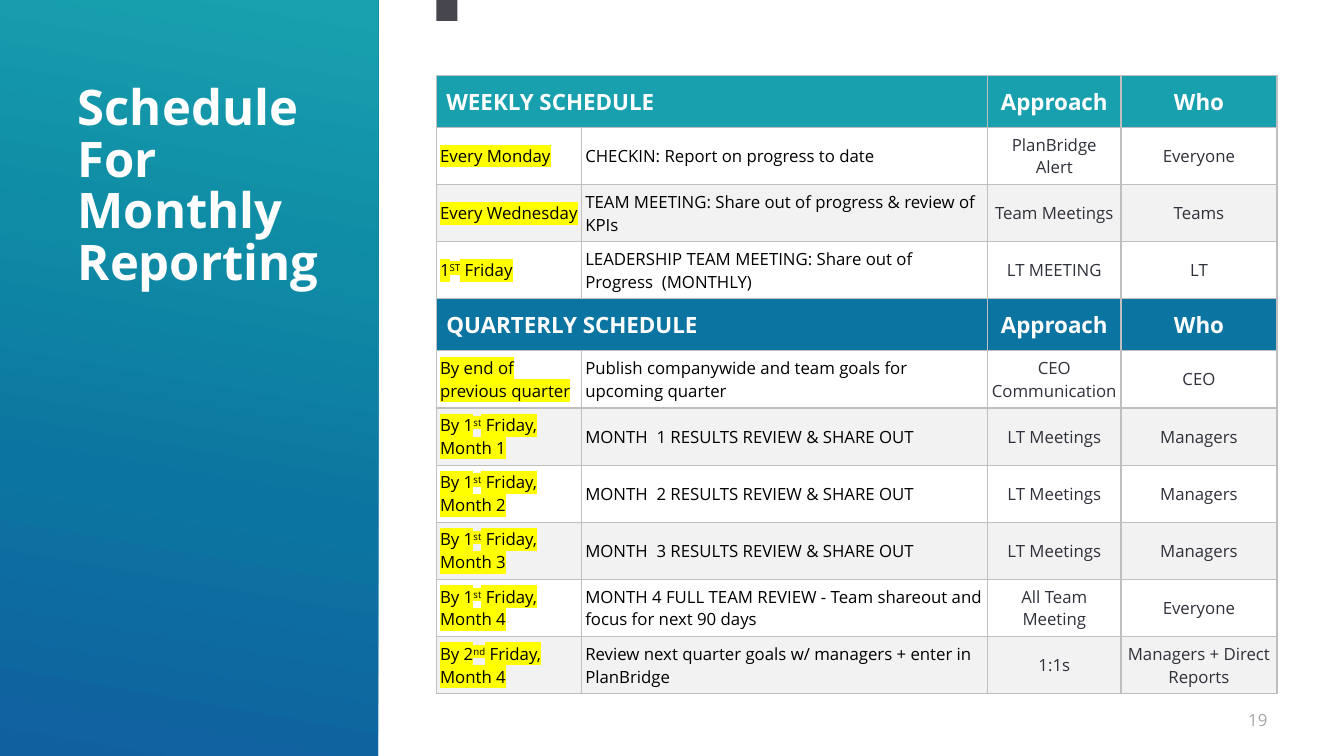
from lxml import etree
from pptx import Presentation
from pptx.dml.color import RGBColor
from pptx.enum.shapes import MSO_SHAPE
from pptx.enum.text import MSO_ANCHOR, PP_ALIGN
from pptx.oxml.ns import qn
from pptx.util import Cm, Pt

RECTANGLE = MSO_SHAPE.RECTANGLE
MIDDLE = MSO_ANCHOR.MIDDLE
LEFT, CENTER, RIGHT = PP_ALIGN.LEFT, PP_ALIGN.CENTER, PP_ALIGN.RIGHT

FONT = "Open Sans"
WHITE = RGBColor(0xFF, 0xFF, 0xFF)
BLACK = RGBColor(0x00, 0x00, 0x00)
INK = RGBColor(0x2F, 0x31, 0x3A)
CHARCOAL = RGBColor(0x47, 0x46, 0x4E)
PAGE_GREY = RGBColor(0xA6, 0xA6, 0xA6)
BORDER_GREY = RGBColor(0xBF, 0xBF, 0xBF)
BAND_GREY = RGBColor(0xF2, 0xF2, 0xF2)
YELLOW = RGBColor(0xFF, 0xFF, 0x00)
TEAL = RGBColor(0x19, 0xA0, 0xAF)
BLUE = RGBColor(0x0B, 0x74, 0xA0)
PANEL_STOPS = [
    (0, RGBColor(0x10, 0x60, 0xA0)),
    (36, RGBColor(0x0C, 0x74, 0xA0)),
    (66, RGBColor(0x0F, 0x8B, 0xA5)),
    (99, RGBColor(0x19, 0xA1, 0xAF)),
]

COLUMN_WIDTHS = [3.66, 10.23, 3.36, 3.93]
HEADER_HEIGHT, ENTRY_HEIGHT = 1.31, 1.44

# Text between carets is raised.
SECTIONS = [
    ("WEEKLY SCHEDULE", TEAL, [
        ("Every Monday", "CHECKIN: Report on progress to date", "PlanBridge Alert", "Everyone"),
        ("Every Wednesday", "TEAM MEETING: Share out of progress & review of KPIs",
         "Team Meetings", "Teams"),
        ("1^ST^ Friday", "LEADERSHIP TEAM MEETING: Share out of Progress  (MONTHLY)",
         "LT MEETING", "LT"),
    ]),
    ("QUARTERLY SCHEDULE", BLUE, [
        ("By end of previous quarter", "Publish companywide and team goals for upcoming quarter",
         "CEO Communication", "CEO"),
        *[(f"By 1^st^ Friday, Month {month}", f"MONTH  {month} RESULTS REVIEW & SHARE OUT",
           "LT Meetings", "Managers") for month in (1, 2, 3)],
        ("By 1^st^ Friday, Month 4",
         "MONTH 4 FULL TEAM REVIEW - Team shareout and focus for next 90 days",
         "All Team Meeting", "Everyone"),
        ("By 2^nd^ Friday, Month 4", "Review next quarter goals w/ managers + enter in PlanBridge",
         "1:1s", "Managers + Direct Reports"),
    ]),
]


def style_paragraph(para, size, color, bold=False, align=LEFT):
    para.alignment = align
    para.font.name = FONT
    para.font.size = Pt(size)
    para.font.bold = bold
    para.font.color.rgb = color


def add_block(page, left, top, width, height):
    block = page.shapes.add_shape(RECTANGLE, Cm(left), Cm(top), Cm(width), Cm(height))
    block.shadow.inherit = False
    block.line.fill.background()
    return block


def add_text(page, left, top, width, height, text):
    box = page.shapes.add_textbox(Cm(left), Cm(top), Cm(width), Cm(height))
    box.text_frame.word_wrap = True
    para = box.text_frame.paragraphs[0]
    para.text = text
    return box.text_frame, para


def add_title_panel(page, left, top, width, height):
    panel = add_block(page, left, top, width, height)
    panel.fill.gradient()
    panel.fill.gradient_angle = 80
    stops = next(panel._element.iter(qn("a:gsLst")))
    for stop in list(stops):
        stops.remove(stop)
    for percent, color in PANEL_STOPS:
        stop = etree.SubElement(stops, qn("a:gs"), pos=str(percent * 1000))
        etree.SubElement(stop, qn("a:srgbClr"), val=str(color))

    frame, para = add_text(page, left + 1.71, top + 1.9, width - 1.71, 3.81,
                           "Schedule For Monthly Reporting")
    frame.margin_top = Cm(0.22)
    frame.margin_right = Cm(0.5)
    para.line_spacing = 0.88
    style_paragraph(para, 35, WHITE, bold=True)


def add_borders(cell):
    properties = cell._tc.get_or_add_tcPr()
    for side in ("a:lnL", "a:lnR", "a:lnT", "a:lnB"):
        line = etree.SubElement(properties, qn(side), w=str(Pt(1)))
        fill = etree.SubElement(line, qn("a:solidFill"))
        etree.SubElement(fill, qn("a:srgbClr"), val=str(BORDER_GREY))


def prepare_cell(cell, fill_color):
    add_borders(cell)
    if fill_color is None:
        cell.fill.background()
    else:
        cell.fill.solid()
        cell.fill.fore_color.rgb = fill_color
    cell.vertical_anchor = MIDDLE
    cell.margin_left = cell.margin_right = Cm(0.09)
    cell.margin_top = cell.margin_bottom = Cm(0.14)
    return cell.text_frame.paragraphs[0]


def write_date(para, text):
    """Write a highlighted date whose ordinal ending is raised."""
    for index, part in enumerate(text.split("^")):
        span = para.add_run()
        span.text = part
        properties = span._r.get_or_add_rPr()
        if index % 2:
            properties.set("baseline", "30000")
        highlight = etree.SubElement(properties, qn("a:highlight"))
        etree.SubElement(highlight, qn("a:srgbClr"), val=str(YELLOW))


def fill_header(cells, name, color):
    for cell, text in zip(cells, (name, "", "Approach", "Who")):
        para = prepare_cell(cell, color)
        para.text = text
        style_paragraph(para, 16, WHITE, True, CENTER if text != name else LEFT)
    cells[0].merge(cells[1])
    cells[0].margin_left = Cm(0.25)


def fill_entry(cells, entry, band):
    for column, (cell, text) in enumerate(zip(cells, entry)):
        para = prepare_cell(cell, band)
        if column == 0:
            write_date(para, text)
        else:
            para.text = text
        if column < 2:
            style_paragraph(para, 12, BLACK)
        else:
            style_paragraph(para, 12, INK, align=CENTER)


def add_schedule(page, left, top):
    row_count = sum(1 + len(entries) for _, _, entries in SECTIONS)
    entry_count = row_count - len(SECTIONS)
    height = len(SECTIONS) * HEADER_HEIGHT + entry_count * ENTRY_HEIGHT
    table = page.shapes.add_table(row_count, len(COLUMN_WIDTHS), Cm(left), Cm(top),
                                  Cm(sum(COLUMN_WIDTHS)), Cm(height)).table
    table.first_row = table.horz_banding = False
    for column, width in zip(table.columns, COLUMN_WIDTHS):
        column.width = Cm(width)

    rows = iter(table.rows)
    for name, color, entries in SECTIONS:
        header = next(rows)
        header.height = Cm(HEADER_HEIGHT)
        fill_header(list(header.cells), name, color)
        for index, entry in enumerate(entries):
            row = next(rows)
            row.height = Cm(ENTRY_HEIGHT)
            fill_entry(row.cells, entry, BAND_GREY if index % 2 else None)


def add_marker(page, left, top, size):
    marker = add_block(page, left, top, size, size)
    marker.fill.solid()
    marker.fill.fore_color.rgb = CHARCOAL


def add_page_number(page, left, top, width, height):
    frame, para = add_text(page, left, top, width, height, "19")
    frame.vertical_anchor = MIDDLE
    style_paragraph(para, 12, PAGE_GREY, align=RIGHT)


def main():
    deck = Presentation()
    deck.slide_width, deck.slide_height = Cm(33.87), Cm(19.05)
    page = deck.slides.add_slide(deck.slide_layouts[6])
    add_title_panel(page, 0, 0, 9.53, 19.05)
    add_marker(page, 11, 0, 0.53)
    add_schedule(page, 11, 1.9)
    add_page_number(page, 23.93, 17.62, 8.26, 1.02)
    deck.save("out.pptx")


if __name__ == "__main__":
    main()
